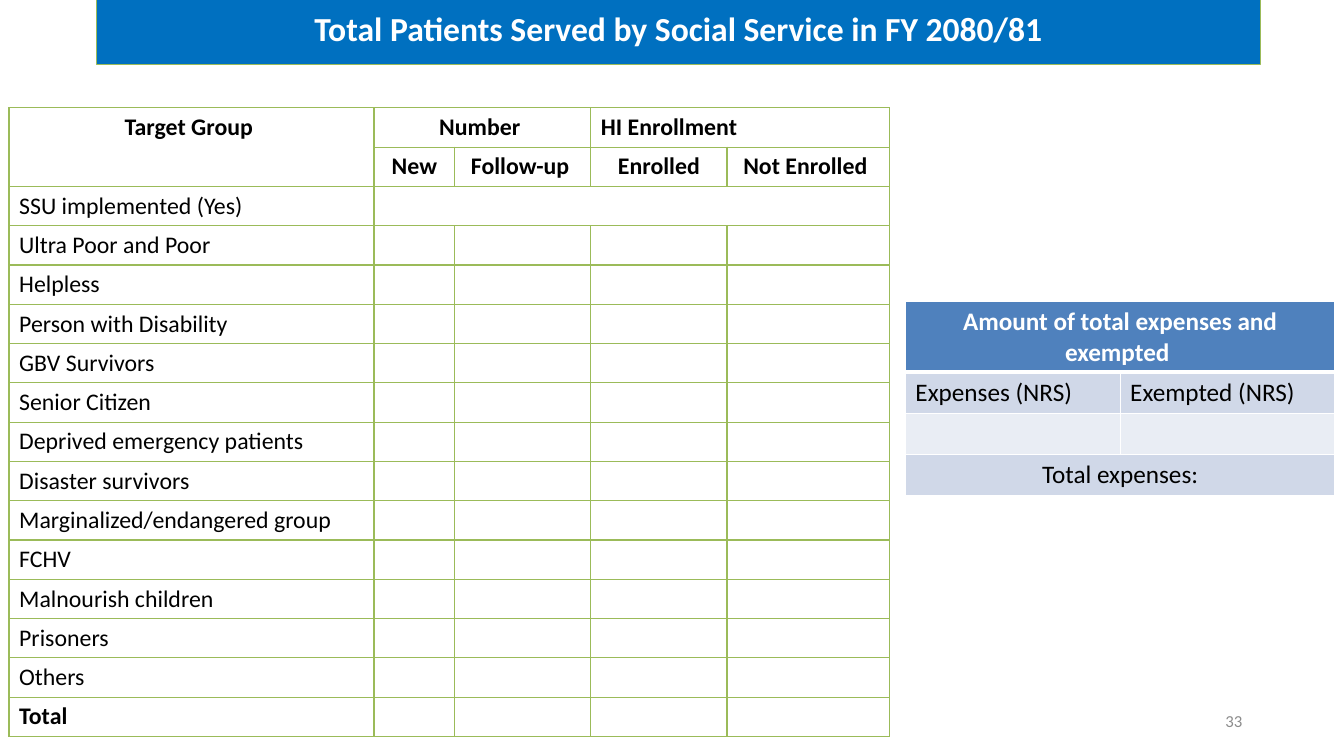
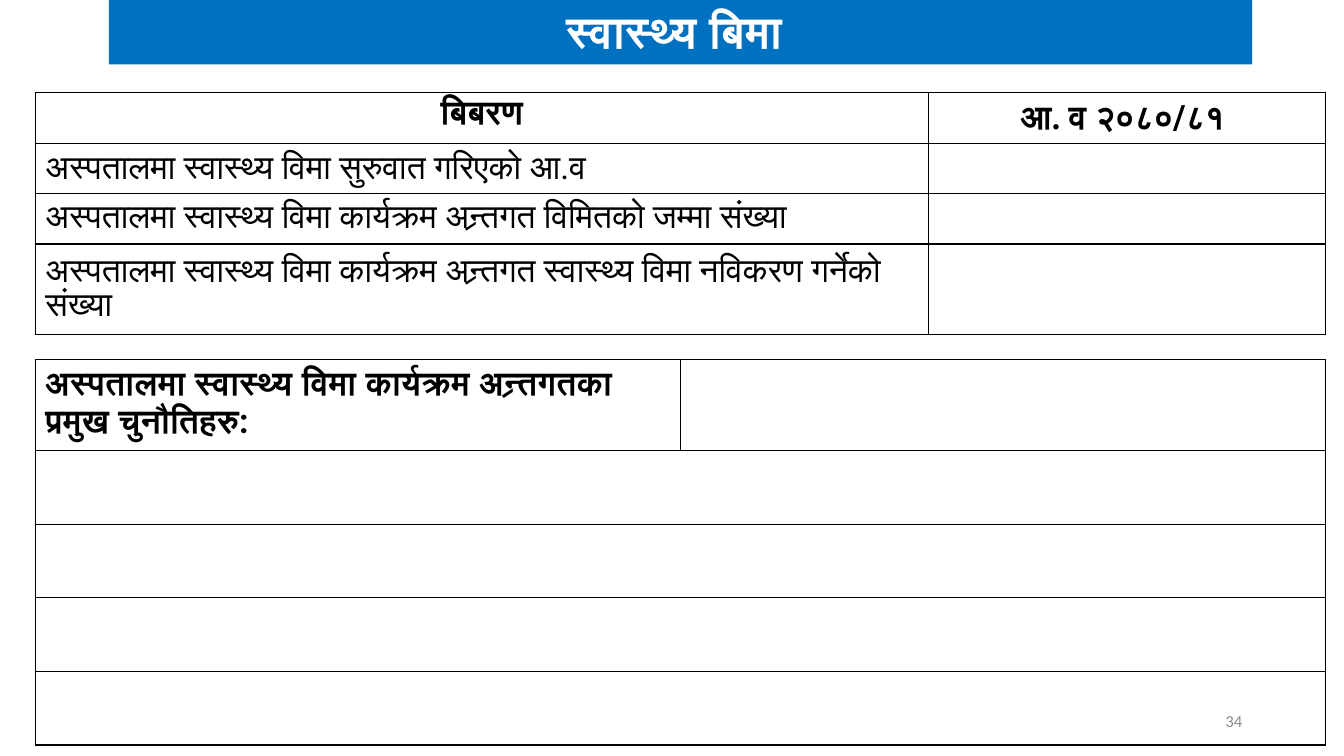
from lxml.etree import SubElement
from pptx import Presentation
from pptx.dml.color import RGBColor
from pptx.enum.shapes import MSO_SHAPE
from pptx.enum.text import MSO_ANCHOR, PP_ALIGN
from pptx.oxml.ns import qn
from pptx.util import Inches, Pt

BLUE, GREEN, WHITE, BLACK, GREY = "0070C0", "9BBB59", "FFFFFF", "000000", "8C8C8C"
HEADER_BLUE, BAND_DARK, BAND_LIGHT = "4F81BD", "D0D8E8", "E9EDF4"
LATIN, NEPALI, NEPALI_SERIF = "Calibri", "Roboto", "Times New Roman"
ANCHORS = {"top": MSO_ANCHOR.TOP, "middle": MSO_ANCHOR.MIDDLE}

TARGET_GROUPS = [
    "SSU implemented (Yes)", "Ultra Poor and Poor", "Helpless", "Person with Disability",
    "GBV Survivors", "Senior Citizen", "Deprived emergency patients", "Disaster survivors",
    "Marginalized/endangered group", "FCHV", "Malnourish children", "Prisoners",
    "Others", "Total",
]
INSURANCE_ITEMS = [
    "अस्पतालमा स्वास्थ्य विमा सुरुवात गरिएको आ.व",
    "अस्पतालमा स्वास्थ्य विमा कार्यक्रम अन्र्तगत विमितको जम्मा संख्या",
    "अस्पतालमा स्वास्थ्य विमा कार्यक्रम अन्र्तगत स्वास्थ्य विमा नविकरण गर्नेको संख्या",
]


def rgb(value):
    return RGBColor.from_string(value)


def box(*lengths):
    return [Inches(length) for length in lengths]


def write(paragraph, text, color=BLACK, align=PP_ALIGN.LEFT, **font):
    """Write a string, or (string, font name) pairs, as runs of one paragraph."""
    paragraph.alignment = align
    pieces = [(text, font["name"])] if isinstance(text, str) else text
    for piece, name in pieces:
        run = paragraph.add_run()
        run.text = piece
        for attribute, value in {**font, "name": name}.items():
            setattr(run.font, attribute, value)
        run.font.color.rgb = rgb(color)


def add_title(slide, bounds, text, size, line=None, spacing=1.0):
    band = slide.shapes.add_shape(MSO_SHAPE.RECTANGLE, *box(*bounds))
    band.shadow.inherit = False
    band.fill.solid()
    band.fill.fore_color.rgb = rgb(BLUE)
    if line:
        band.line.color.rgb = rgb(line)
        band.line.width = Pt(0.5)
    else:
        band.line.fill.background()
    frame = band.text_frame
    frame.word_wrap = True
    frame.vertical_anchor = MSO_ANCHOR.MIDDLE
    frame.paragraphs[0].line_spacing = spacing
    write(frame.paragraphs[0], text, WHITE, PP_ALIGN.CENTER,
          name=LATIN, size=Pt(size), bold=True)


def add_slide_number(slide, number):
    frame = slide.shapes.add_textbox(*box(9.42, 6.95, 3, 0.4)).text_frame
    frame.word_wrap = True
    frame.vertical_anchor = MSO_ANCHOR.MIDDLE
    write(frame.paragraphs[0], str(number), GREY, PP_ALIGN.RIGHT, name=LATIN, size=Pt(12))


def set_borders(cell, color, **widths):
    """Draw the cell's edges 1 pt wide unless widths names another width."""
    properties = cell._tc.get_or_add_tcPr()
    for position, edge in enumerate(("lnL", "lnR", "lnT", "lnB")):
        width = str(Pt(widths.get(edge, 1)))
        line = properties.makeelement(qn(f"a:{edge}"), {"w": width})
        fill = SubElement(line, qn("a:solidFill"))
        SubElement(fill, qn("a:srgbClr"), val=color)
        properties.insert(position, line)


def add_grid(slide, left, top, columns, heights, texts, border, font, size,
             merges=(), centered=(), bold=(), fills=None, anchor="top"):
    """Add a table; merges are (row, column, last row, last column)."""
    table = slide.shapes.add_table(
        len(heights), len(columns), *box(left, top, sum(columns), sum(heights))).table
    table.first_row = table.horz_banding = False
    for column, width in zip(table.columns, columns):
        column.width = Inches(width)
    for row, height in zip(table.rows, heights):
        row.height = Inches(height)
    for row, column, last_row, last_column in merges:
        table.cell(row, column).merge(table.cell(last_row, last_column))
    for row in range(len(heights)):
        for column in range(len(columns)):
            cell = table.cell(row, column)
            cell.vertical_anchor = ANCHORS["top" if row in centered else anchor]
            if fills:
                cell.fill.solid()
                cell.fill.fore_color.rgb = rgb(fills[row])
            else:
                cell.fill.background()
            set_borders(cell, border, lnB=3 if fills and row == 0 else 1)
            paragraph = cell.text_frame.paragraphs[0]
            text = texts.get((row, column))
            if text:
                header = fills and row == 0
                write(paragraph, text, WHITE if header else BLACK,
                      PP_ALIGN.CENTER if row in centered and text != "HI Enrollment"
                      else PP_ALIGN.LEFT,
                      name=font, size=Pt(size), bold=row in bold)
            else:
                SubElement(paragraph._p, qn("a:endParaRPr"), sz=str(size * 100))


def add_patient_table(slide, left, top):
    texts = {(0, 0): "Target Group ", (0, 1): "Number ", (0, 3): "HI Enrollment"}
    subheads = ["New", "Follow-up ", "Enrolled", "Not Enrolled "]
    texts.update({(1, column): text for column, text in enumerate(subheads, 1)})
    texts.update({(row, 0): text for row, text in enumerate(TARGET_GROUPS, 2)})
    last = len(TARGET_GROUPS) + 1
    add_grid(slide, left, top, [3.62, 0.8, 1.35, 1.35, 1.61], [0.39] * (last + 1), texts,
             GREEN, LATIN, 17, centered=(0, 1), bold=(0, 1, last),
             merges=[(0, 0, 1, 0), (0, 1, 0, 2), (0, 3, 0, 4), (2, 1, 2, 4)])


def add_expense_table(slide, left, top):
    texts = {(0, 0): "Amount of total expenses and exempted ", (1, 0): "Expenses (NRS)",
             (1, 1): "Exempted (NRS)", (3, 0): "Total expenses:"}
    add_grid(slide, left, top, [2.13] * 2, [0.7] + [0.41] * 3, texts, WHITE, LATIN, 18,
             merges=[(0, 0, 0, 1), (3, 0, 3, 1)], centered=(0, 3), bold=(0,),
             fills=[HEADER_BLUE, BAND_DARK, BAND_LIGHT, BAND_DARK])


def add_insurance_table(slide, left, top):
    texts = {(0, 0): "बिबरण", (0, 1): [("आ. व ", NEPALI_SERIF), ("२०८०/८१ ", NEPALI)]}
    texts.update({(row, 0): text for row, text in enumerate(INSURANCE_ITEMS, 1)})
    add_grid(slide, left, top, [8.86, 3.94], [0.48, 0.49, 0.49, 0.77], texts,
             BLACK, NEPALI, 24, centered=(0,), bold=(0,), anchor="middle")


def add_challenge_table(slide, left, top):
    texts = {(0, 0): "अस्पतालमा स्वास्थ्य विमा कार्यक्रम अन्र्तगतका प्रमुख चुनौतिहरु:"}
    add_grid(slide, left, top, [6.4] * 2, [0.83] + [0.73] * 4, texts, BLACK, NEPALI, 24,
             merges=[(row, 0, row, 1) for row in range(1, 5)], bold=(0,), anchor="middle")


def build_patients(slide):
    add_slide_number(slide, 33)
    add_patient_table(slide, 0.09, 1.07)
    add_title(slide, (0.96, -0.03, 11.54, 0.67),
              "Total Patients Served by Social Service in FY 2080/81", 24, GREEN, 0.9)
    add_expense_table(slide, 8.98, 2.99)


def build_insurance(slide):
    add_slide_number(slide, 34)
    add_title(slide, (1.08, -0.03, 11.34, 0.67), "स्वास्थ्य बिमा ", 32)
    add_insurance_table(slide, 0.35, 0.92)
    add_challenge_table(slide, 0.35, 3.57)


def main():
    deck = Presentation()
    deck.slide_width, deck.slide_height = box(13.33, 7.5)
    for build in (build_patients, build_insurance):
        build(deck.slides.add_slide(deck.slide_layouts[6]))
    deck.save("out.pptx")


if __name__ == "__main__":
    main()
